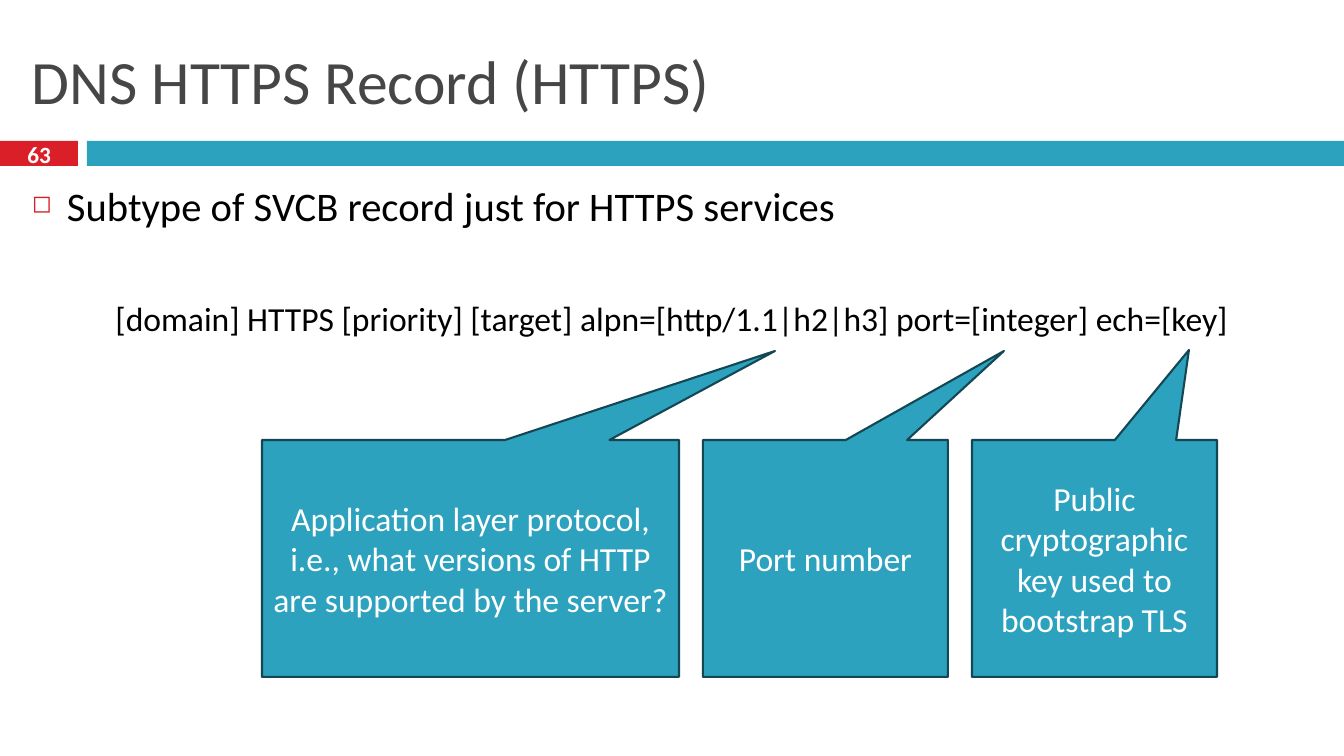
from dataclasses import dataclass

from lxml.etree import SubElement
from pptx import Presentation
from pptx.dml.color import RGBColor
from pptx.enum.shapes import MSO_SHAPE
from pptx.enum.text import MSO_ANCHOR, PP_ALIGN
from pptx.oxml.ns import qn
from pptx.util import Pt

TITLE = "DNS HTTPS Record (HTTPS)"
PAGE_NUMBER = "63"
BULLET = "Subtype of SVCB record just for HTTPS services"
SYNTAX = "[domain] HTTPS [priority] [target] alpn=[http/1.1|h2|h3] port=[integer] ech=[key]"
# text, width, tip of the pointer (x, y)
CALLOUTS = [
    ("Application layer protocol, i.e., what versions of HTTP are supported by the server?",
     417, (775, 351)),
    ("Port number", 245, (1004, 351)),
    ("Public cryptographic key used to bootstrap TLS", 245, (1189, 350)),
]

EMU_PER_PX = 914400 / 100.8
SLIDE_WIDTH, SLIDE_HEIGHT = 1344, 756
MARGIN = 22
BAND_TOP, BAND_HEIGHT = 141, 25
NUMBER_WIDTH, BAND_LEFT = 78, 87
CALLOUT_LEFT, CALLOUT_TOP, CALLOUT_HEIGHT, CALLOUT_GAP = 262, 440, 237, 24
BULLET_INDENT = 35


@dataclass(frozen=True)
class Theme:
    font: str = "Calibri"
    red: str = "DA1F28"
    teal: str = "2DA2BF"
    outline: str = "144754"
    heading: str = "464646"
    body: str = "000000"
    white: str = "FFFFFF"
    title_size: float = 44
    bullet_size: float = 29
    text_size: float = 24
    number_size: float = 16.6


THEME = Theme()


def px(length):
    return round(length * EMU_PER_PX)


def color(value):
    return RGBColor.from_string(value)


def add_text(paragraph, text, size, ink, bold=False, align=PP_ALIGN.LEFT):
    paragraph.alignment = align
    run = paragraph.add_run()
    run.text = text
    run.font.name = THEME.font
    run.font.size = Pt(size)
    run.font.bold = bold
    run.font.color.rgb = color(ink)


def add_text_frame(slide, left, top, width, height, anchor):
    box = slide.shapes.add_textbox(px(left), px(top), px(width), px(height))
    frame = box.text_frame
    frame.word_wrap = True
    frame.vertical_anchor = anchor
    return frame


def add_block(slide, kind, left, top, width, height, fill, line=None):
    shape = slide.shapes.add_shape(kind, px(left), px(top), px(width), px(height))
    shape.shadow.inherit = False
    shape.fill.solid()
    shape.fill.fore_color.rgb = color(fill)
    if line:
        shape.line.color.rgb = color(line)
        shape.line.width = Pt(1.5)
    else:
        shape.line.fill.background()
    return shape


def add_square_bullet(paragraph):
    properties = paragraph._p.get_or_add_pPr()
    properties.set("marL", str(px(BULLET_INDENT)))
    properties.set("indent", str(-px(BULLET_INDENT)))
    bullet_color = SubElement(properties, qn("a:buClr"))
    SubElement(bullet_color, qn("a:srgbClr"), val=THEME.red)
    SubElement(properties, qn("a:buSzPct"), val="60000")
    SubElement(properties, qn("a:buChar"), char="◻")


def add_header(slide):
    add_block(slide, MSO_SHAPE.RECTANGLE, 0, BAND_TOP, NUMBER_WIDTH, BAND_HEIGHT, THEME.red)
    add_block(slide, MSO_SHAPE.RECTANGLE, BAND_LEFT, BAND_TOP,
              SLIDE_WIDTH - BAND_LEFT, BAND_HEIGHT, THEME.teal)
    title = add_text_frame(slide, MARGIN, 25, SLIDE_WIDTH - 2 * MARGIN, 109, MSO_ANCHOR.MIDDLE)
    add_text(title.paragraphs[0], TITLE, THEME.title_size, THEME.heading)
    number = add_text_frame(slide, 0, 138, NUMBER_WIDTH, 33, MSO_ANCHOR.MIDDLE)
    add_text(number.paragraphs[0], PAGE_NUMBER, THEME.number_size, THEME.white,
             bold=True, align=PP_ALIGN.CENTER)


def add_body(slide):
    body = add_text_frame(slide, MARGIN, 176, SLIDE_WIDTH - 2 * MARGIN, 562, MSO_ANCHOR.TOP)
    bullet = body.paragraphs[0]
    add_square_bullet(bullet)
    add_text(bullet, BULLET, THEME.bullet_size, THEME.body)
    syntax = body.add_paragraph()
    syntax.space_before = Pt(49)
    add_text(syntax, SYNTAX, THEME.text_size, THEME.body, align=PP_ALIGN.CENTER)


def add_callouts(slide):
    left = CALLOUT_LEFT
    for text, width, (tip_x, tip_y) in CALLOUTS:
        callout = add_block(slide, MSO_SHAPE.RECTANGULAR_CALLOUT, left, CALLOUT_TOP,
                            width, CALLOUT_HEIGHT, THEME.teal, THEME.outline)
        callout.adjustments[0] = (tip_x - left) / width - 0.5
        callout.adjustments[1] = (tip_y - CALLOUT_TOP) / CALLOUT_HEIGHT - 0.5
        frame = callout.text_frame
        frame.word_wrap = True
        frame.vertical_anchor = MSO_ANCHOR.MIDDLE
        add_text(frame.paragraphs[0], text, THEME.text_size, THEME.white, align=PP_ALIGN.CENTER)
        left += width + CALLOUT_GAP


def main():
    presentation = Presentation()
    presentation.slide_width = px(SLIDE_WIDTH)
    presentation.slide_height = px(SLIDE_HEIGHT)
    slide = presentation.slides.add_slide(presentation.slide_layouts[6])
    add_header(slide)
    add_body(slide)
    add_callouts(slide)
    presentation.save("out.pptx")


if __name__ == "__main__":
    main()
